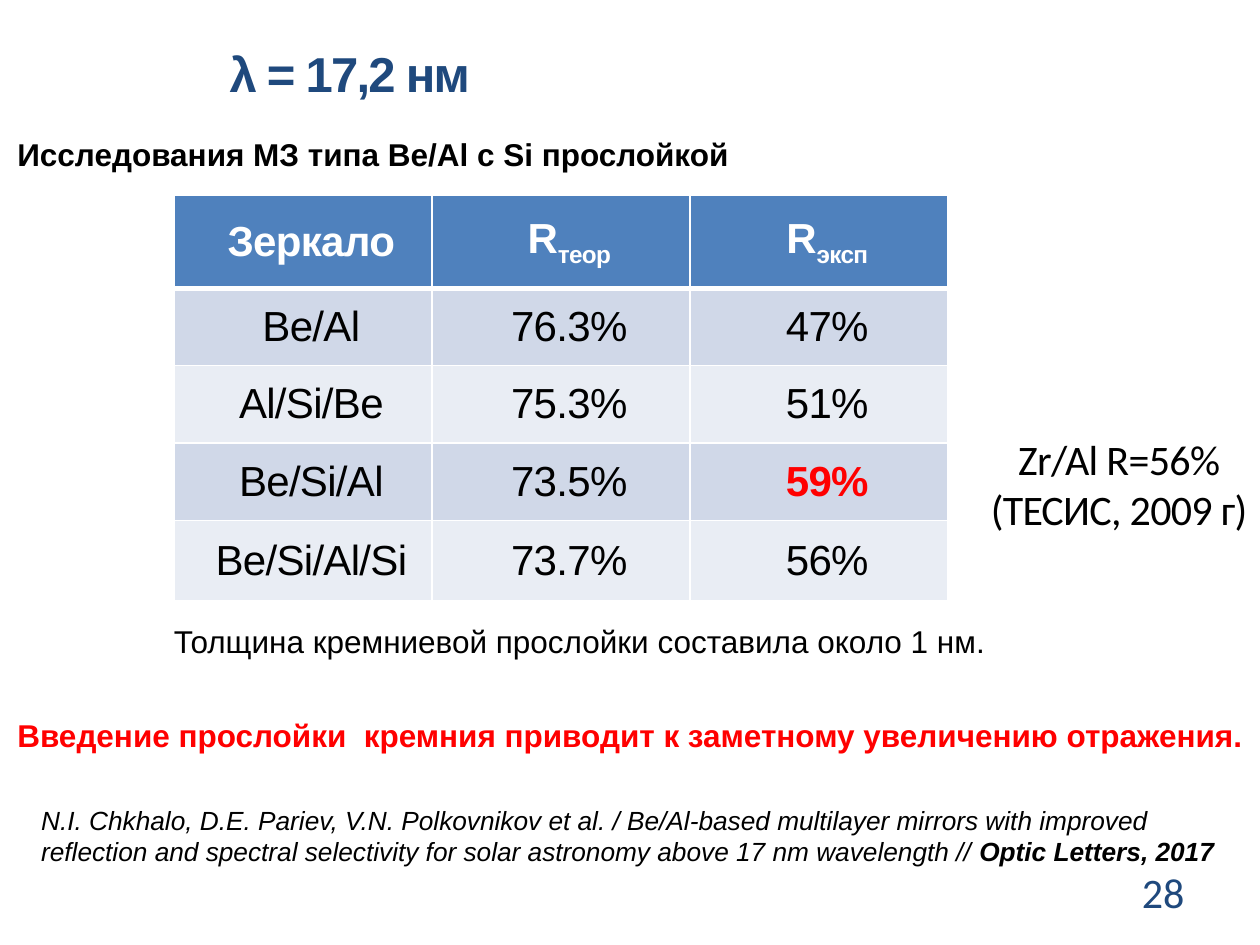
from lxml import etree
from pptx import Presentation
from pptx.dml.color import RGBColor
from pptx.enum.text import MSO_ANCHOR, MSO_AUTO_SIZE, PP_ALIGN
from pptx.oxml.ns import qn
from pptx.util import Cm, Pt

LEFT, CENTER, RIGHT = PP_ALIGN.LEFT, PP_ALIGN.CENTER, PP_ALIGN.RIGHT
TOP, MIDDLE = MSO_ANCHOR.TOP, MSO_ANCHOR.MIDDLE
FIXED, GROW = MSO_AUTO_SIZE.NONE, MSO_AUTO_SIZE.SHAPE_TO_FIT_TEXT
TITLE_ONLY = 5

THEME = {
    "navy": "1F497D", "black": "000000", "red": "FF0000", "white": "FFFFFF",
    "header": "4F81BD", "bands": ("D0D8E8", "E9EDF4"),
    "main": "Arial", "side": "Calibri",
    "title": 28, "large": 24, "body": 18, "citation": 15,
}

TITLE = {
    "box": (0, 0.74, 14.1, 1.45), "lines": [[("λ = 17,2 нм", {})]],
    "style": {"size": "title", "color": "navy", "bold": True, "spacing": -100},
    "align": CENTER, "anchor": MIDDLE, "fit": FIXED,
}

TEXTS = [
    {"box": (0.1, 2.59, 25, 1.02),
     "lines": [[("Исследования МЗ типа Be/Al с Si прослойкой", {})]],
     "style": {"bold": True}},
    {"box": (18.2, 17.46, 5.93, 1.02), "lines": [[("28", {})]],
     "style": {"face": "side", "size": "large", "color": "navy"},
     "align": RIGHT, "anchor": MIDDLE, "fit": FIXED},
    {"box": (0.58, 16.08, 24.5, 2.39),
     "lines": [[
         ("N.I. Chkhalo, D.E. Pariev, V.N. Polkovnikov et al. / "
          "Be/Al-based multilayer mirrors with improved reflection and "
          "spectral selectivity for solar astronomy above 17 nm wavelength // ", {}),
         ("Optic Letters, 2017", {"bold": True})]],
     "style": {"size": "citation", "italic": True}},
    {"box": (0.1, 13.92, 25.3, 1.42),
     "lines": [[("Введение прослойки  кремния приводит к заметному увеличению отражения.", {})]],
     "style": {"color": "red", "bold": True}, "line_spacing": 1.5},
    {"box": (19.7, 8.61, 5.72, 2.31),
     "lines": [[("Zr/Al R=56%", {})], [("(ТЕСИС, 2009 г)", {})]],
     "style": {"face": "side", "size": "large", "spacing": -40},
     "align": CENTER, "wrap": False},
    {"box": (2.49, 12.04, 18.39, 1.42),
     "lines": [[("Толщина кремниевой прослойки составила около 1 нм.", {})]],
     "align": CENTER, "line_spacing": 1.5},
]

SUBSCRIPT = {"baseline": -25000}
HEADER = [
    [("Зеркало", {})],
    [("R", {}), ("теор", SUBSCRIPT)],
    [("R", {}), ("эксп", SUBSCRIPT)],
]
MIRRORS = [
    ("Be/Al", "76.3%", "47%"),
    ("Al/Si/Be", "75.3%", "51%"),
    ("Be/Si/Al", "73.5%", "59%"),
    ("Be/Si/Al/Si", "73.7%", "56%"),
]
BEST = "59%"
TABLE_LEFT, TABLE_TOP, COLUMN_WIDTH = 3.51, 3.94, 5.2
ROW_HEIGHTS = (1.87, 1.56, 1.56, 1.56, 1.63)


def set_attributes(target, values):
    for name, value in values.items():
        setattr(target, name, value)


def add_runs(paragraph, runs, base):
    for text, changes in runs:
        style = {"face": "main", "size": "body", "color": "black",
                 "bold": False, "italic": False, **base, **changes}
        run = paragraph.add_run()
        run.text = text
        set_attributes(run.font, {
            "name": THEME[style["face"]], "size": Pt(THEME[style["size"]]),
            "bold": style["bold"], "italic": style["italic"]})
        run.font.color.rgb = RGBColor.from_string(THEME[style["color"]])
        properties = run.font._element
        for key, attribute in (("spacing", "spc"), ("baseline", "baseline")):
            if key in style:
                properties.set(attribute, str(style[key]))


def fill_text(shape, item):
    frame = shape.text_frame
    set_attributes(frame, {
        "word_wrap": item.get("wrap", True),
        "auto_size": item.get("fit", GROW),
        "vertical_anchor": item.get("anchor", TOP)})
    for index, runs in enumerate(item["lines"]):
        paragraph = frame.add_paragraph() if index else frame.paragraphs[0]
        set_attributes(paragraph, {
            "alignment": item.get("align", LEFT),
            "line_spacing": item.get("line_spacing")})
        add_runs(paragraph, runs, item.get("style", {}))


def add_border(cell, side, width):
    line = etree.SubElement(cell._tc.get_or_add_tcPr(), qn("a:ln" + side), w=str(Pt(width)))
    fill = etree.SubElement(line, qn("a:solidFill"))
    etree.SubElement(fill, qn("a:srgbClr"), val=THEME["white"])


def format_cell(cell, runs, style, fill, borders):
    set_attributes(cell, {
        "vertical_anchor": MIDDLE, "margin_left": Cm(0.18),
        "margin_right": Cm(0.18), "margin_top": 0, "margin_bottom": 0})
    for side, width in borders.items():
        add_border(cell, side, width)
    cell.fill.solid()
    cell.fill.fore_color.rgb = RGBColor.from_string(fill)
    paragraph = cell.text_frame.paragraphs[0]
    paragraph.alignment = CENTER
    properties = paragraph._p.get_or_add_pPr()
    properties.set("marL", "0")
    properties.set("indent", str(Cm(0.33)))
    tabs = etree.SubElement(properties, qn("a:tabLst"))
    etree.SubElement(tabs, qn("a:tab"), pos=str(Cm(2.39)), algn="l")
    add_runs(paragraph, runs, style)


def add_mirror_table(slide):
    rows = [HEADER] + [
        [[(value, {"color": "red", "bold": True} if value == BEST else {})] for value in mirror]
        for mirror in MIRRORS]
    columns = len(HEADER)
    table = slide.shapes.add_table(
        len(rows), columns, Cm(TABLE_LEFT), Cm(TABLE_TOP),
        Cm(COLUMN_WIDTH * columns), Cm(sum(ROW_HEIGHTS))).table
    for column in table.columns:
        column.width = Cm(COLUMN_WIDTH)
    for row_index, row in enumerate(rows):
        table.rows[row_index].height = Cm(ROW_HEIGHTS[row_index])
        is_header = row_index == 0
        style = {"size": "large", "spacing": -40, "bold": is_header,
                 "color": "white" if is_header else "black"}
        fill = THEME["header"] if is_header else THEME["bands"][(row_index - 1) % 2]
        borders = {"L": 1, "R": 1, "T": 3 if row_index == 1 else 1, "B": 3 if is_header else 1}
        for column_index, runs in enumerate(row):
            format_cell(table.cell(row_index, column_index), runs, style, fill, borders)


def main():
    presentation = Presentation()
    set_attributes(presentation, {"slide_width": Cm(25.4), "slide_height": Cm(19.05)})
    slide = presentation.slides.add_slide(presentation.slide_layouts[TITLE_ONLY])
    title = slide.shapes.title
    set_attributes(title, dict(zip(("left", "top", "width", "height"), map(Cm, TITLE["box"]))))
    fill_text(title, TITLE)
    add_mirror_table(slide)
    for item in TEXTS:
        fill_text(slide.shapes.add_textbox(*map(Cm, item["box"])), item)
    presentation.save("out.pptx")


if __name__ == "__main__":
    main()
